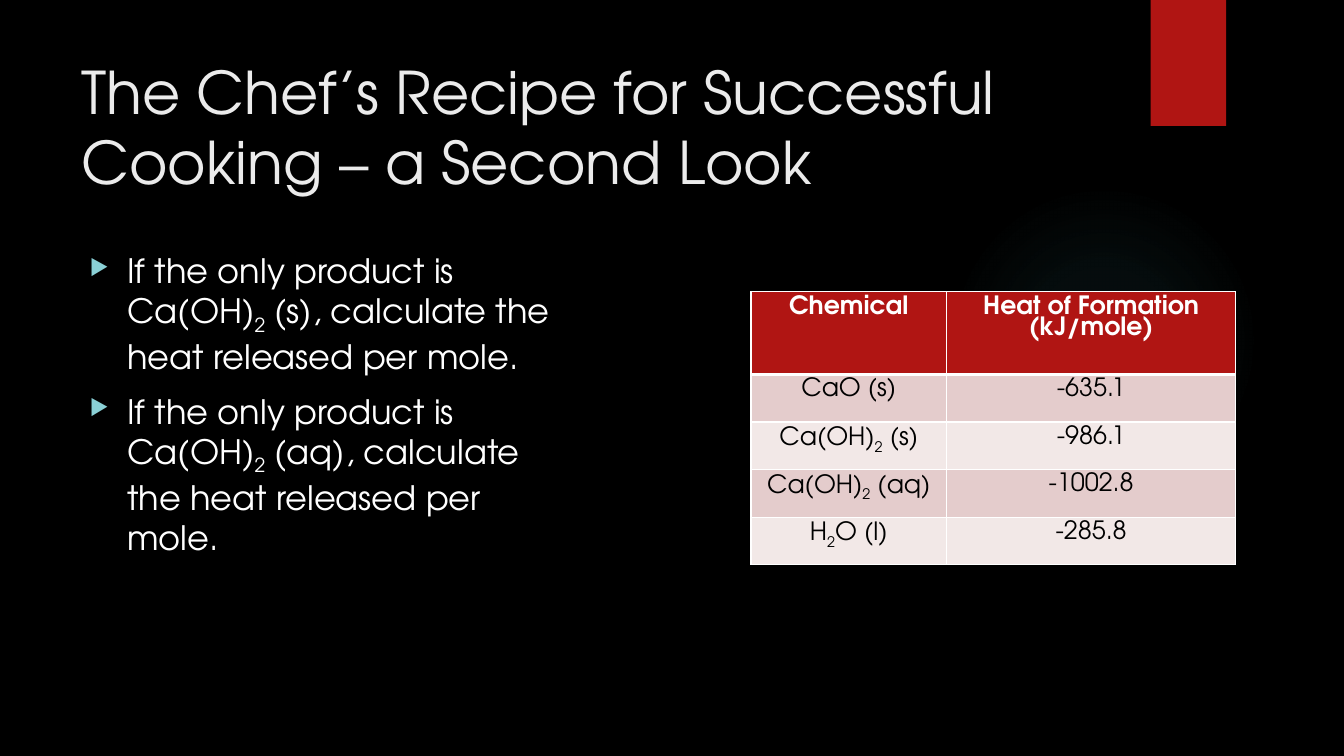
from lxml import etree
from pptx import Presentation
from pptx.dml.color import RGBColor
from pptx.enum.shapes import MSO_SHAPE
from pptx.enum.text import MSO_ANCHOR, PP_ALIGN
from pptx.oxml.ns import qn
from pptx.util import Pt

OVAL, RECT = MSO_SHAPE.OVAL, MSO_SHAPE.RECTANGLE
CENTER, LEFT, TOP = PP_ALIGN.CENTER, PP_ALIGN.LEFT, MSO_ANCHOR.TOP

TITLE = "The Chef’s Recipe for Successful Cooking – a Second Look"
BULLETS = [
    "If the only product is Ca(OH)_2_ (s), calculate the heat released per mole.",
    "If the only product is Ca(OH)_2_ (aq), calculate the heat released per mole.",
]
HEATS = [
    ("Chemical", "Heat of Formation (kJ/mole)"),
    ("CaO (s)", "-635.1"),
    ("Ca(OH)_2_ (s)", "-986.1"),
    ("Ca(OH)_2_ (aq)", "-1002.8"),
    ("H_2_O (l)", "-285.8"),
]
THEME = {
    "font": "TeX Gyre Adventor",
    "title_size": 42, "body_size": 24, "table_size": 18, "bullet_percent": 65,
    "back": "000000", "title": "EBEBEB", "body": "FFFFFF",
    "accent": "B01513", "bullet": "8AD0D6", "glow": "50B9C1",
    "border": "FFFFFF", "cell_text": "000000", "bands": ("E4CCCC", "F2E8E7"),
}
GLOW_STOPS = [(0, 7), (36, 6), (69, 0), (100, 0)]
COLUMNS = (139.7, 206.6)
HEADER_HEIGHT, ROW_HEIGHT = 59, 34
TABLE_LINE_SPACING = 0.92


def rgb(name):
    return RGBColor.from_string(name)


def add(parent, tag, **attrs):
    return etree.SubElement(parent, qn(tag), {k: str(v) for k, v in attrs.items()})


def write(p, text, size, color, bold=False, align=LEFT):
    p.alignment = align
    for i, part in enumerate(text.split("_")):
        r = p.add_run()
        r.text = part
        r.font.name, r.font.size, r.font.bold = THEME["font"], Pt(size), bold
        r.font.color.rgb = rgb(color)
        if i % 2:
            r.font._element.set("baseline", "-25000")


def add_text(s, box):
    tf = s.shapes.add_textbox(*map(Pt, box)).text_frame
    tf.word_wrap = True
    tf.vertical_anchor = TOP
    return tf


def add_block(s, kind, box):
    sp = s.shapes.add_shape(kind, *map(Pt, box))
    sp.shadow.inherit = False
    sp.line.fill.background()
    sp.fill.solid()
    sp.fill.fore_color.rgb = rgb(THEME["accent"])
    return sp


def fill_with_glow(sp):
    solid = sp._element.spPr.find(qn("a:solidFill"))
    grad = etree.Element(qn("a:gradFill"), rotWithShape="1")
    stops = add(grad, "a:gsLst")
    for pos, alpha in GLOW_STOPS:
        color = add(add(stops, "a:gs", pos=pos * 1000), "a:srgbClr", val=THEME["glow"])
        add(color, "a:alpha", val=alpha * 1000)
    circle = add(grad, "a:path", path="circle")
    add(circle, "a:fillToRect", l=50000, t=50000, r=50000, b=50000)
    solid.getparent().replace(solid, grad)


def add_bullet(p):
    pPr = p._p.get_or_add_pPr()
    pPr.set("marL", str(Pt(27)))
    pPr.set("indent", str(-Pt(27)))
    add(add(pPr, "a:buClr"), "a:srgbClr", val=THEME["bullet"])
    add(pPr, "a:buSzPct", val=THEME["bullet_percent"] * 1000)
    add(pPr, "a:buChar", char="▶")


def add_borders(cell, top, bottom):
    tcPr = cell._tc.get_or_add_tcPr()
    for side, width in zip("LRTB", (1, 1, top, bottom)):
        ln = add(tcPr, "a:ln" + side, w=Pt(width))
        add(add(ln, "a:solidFill"), "a:srgbClr", val=THEME["border"])


def add_heats(s, left, top):
    heights = [HEADER_HEIGHT] + [ROW_HEIGHT] * (len(HEATS) - 1)
    table = s.shapes.add_table(len(HEATS), len(COLUMNS), Pt(left), Pt(top),
                               Pt(sum(COLUMNS)), Pt(sum(heights))).table
    for column, width in zip(table.columns, COLUMNS):
        column.width = Pt(width)
    for i, values in enumerate(HEATS):
        table.rows[i].height = Pt(heights[i])
        header = i == 0
        for j, value in enumerate(values):
            cell = table.cell(i, j)
            cell.margin_left = cell.margin_right = Pt(7.7)
            cell.margin_top = cell.margin_bottom = Pt(3.6)
            cell.vertical_anchor = TOP
            add_borders(cell, 3 if i == 1 else 1, 3 if header else 1)
            cell.fill.solid()
            cell.fill.fore_color.rgb = rgb(
                THEME["accent"] if header else THEME["bands"][(i - 1) % 2])
            p = cell.text_frame.paragraphs[0]
            p.line_spacing = TABLE_LINE_SPACING
            color = THEME["body"] if header else THEME["cell_text"]
            write(p, value, THEME["table_size"], color, header, CENTER)


def main():
    prs = Presentation()
    prs.slide_width, prs.slide_height = Pt(960), Pt(540)
    s = prs.slides.add_slide(prs.slide_layouts[6])
    s.background.fill.solid()
    s.background.fill.fore_color.rgb = rgb(THEME["back"])

    fill_with_glow(add_block(s, OVAL, (677.5, 131.8, 221.8, 221.8)))
    add_block(s, RECT, (821.9, 0, 54, 90))

    tf = add_text(s, (51.1, 36, 740.9, 110.2))
    write(tf.paragraphs[0], TITLE, THEME["title_size"], THEME["title"])

    add_heats(s, 536.4, 208.5)

    tf = add_text(s, (56.9, 175, 346.3, 316.8))
    for i, text in enumerate(BULLETS):
        p = tf.add_paragraph() if i else tf.paragraphs[0]
        add_bullet(p)
        if i:
            p.space_before = Pt(10)
        write(p, text, THEME["body_size"], THEME["body"])

    prs.save("out.pptx")


if __name__ == "__main__":
    main()
